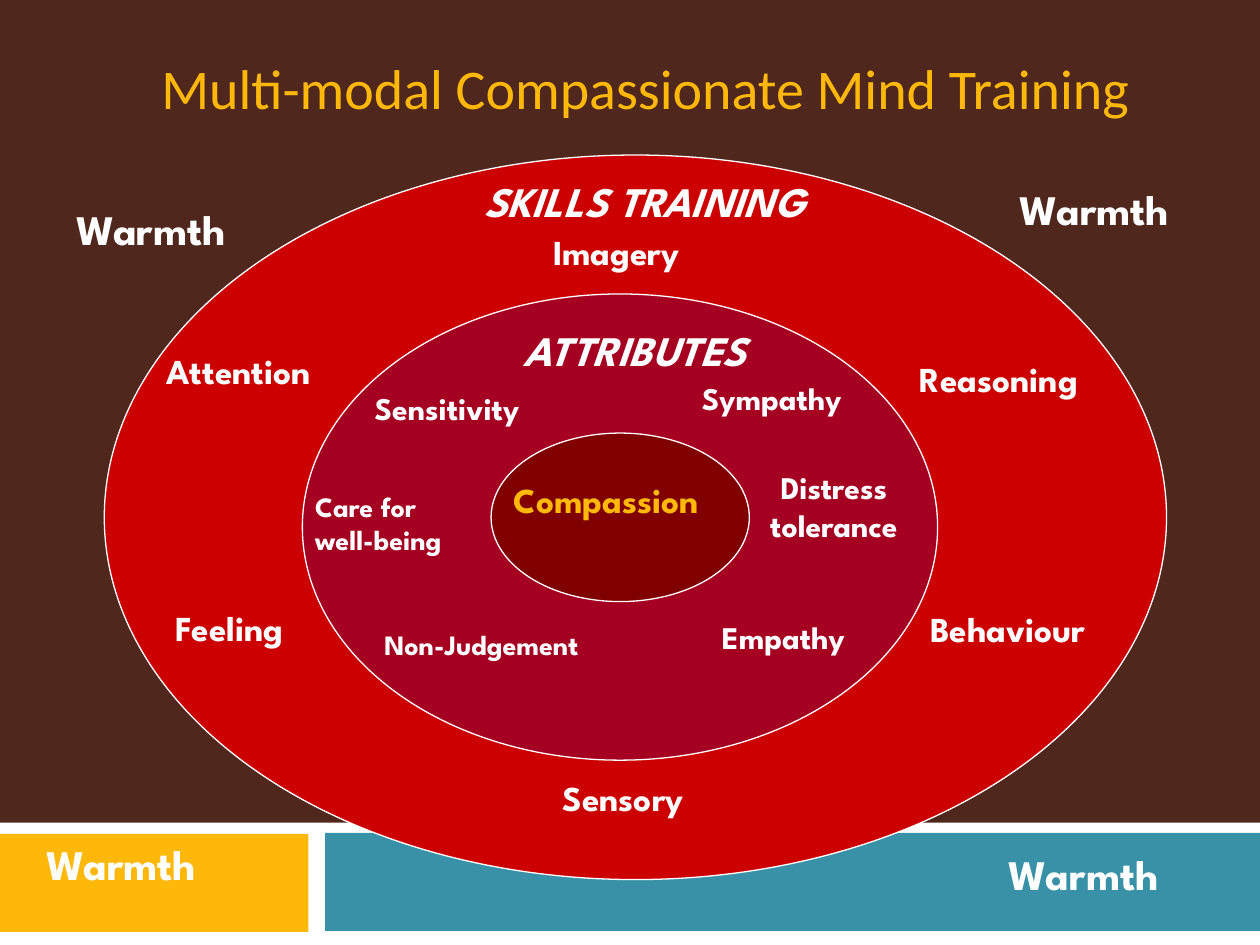
from dataclasses import dataclass

from pptx import Presentation
from pptx.dml.color import RGBColor
from pptx.enum.shapes import MSO_SHAPE
from pptx.enum.text import MSO_ANCHOR, MSO_AUTO_SIZE, PP_ALIGN
from pptx.shapes.autoshape import Shape
from pptx.slide import Slide
from pptx.util import Pt


@dataclass(frozen=True)
class Theme:
    back: str = "4F271C"
    white: str = "FFFFFF"
    gold: str = "FEB80A"
    teal: str = "3891A7"
    red: str = "CC0000"
    wine: str = "A50021"
    maroon: str = "800000"
    font: str = "League Spartan"
    title_font: str = "Calibri"
    title: int = 32
    head: int = 24
    skill: int = 20
    trait: int = 18
    small: int = 16
    edge: float = 0.75


THEME = Theme()


@dataclass(frozen=True)
class Box:
    left: float
    top: float
    width: float
    height: float

    def points(self) -> tuple:
        return Pt(self.left), Pt(self.top), Pt(self.width), Pt(self.height)


@dataclass(frozen=True)
class Label:
    text: str
    box: Box
    size: int
    color: str = THEME.white
    font: str = THEME.font
    bold: bool = True
    slant: bool = False
    align: PP_ALIGN = PP_ALIGN.LEFT
    anchor: MSO_ANCHOR = MSO_ANCHOR.TOP
    fit: MSO_AUTO_SIZE = MSO_AUTO_SIZE.SHAPE_TO_FIT_TEXT
    leading: float = 1.0


@dataclass(frozen=True)
class Patch:
    box: Box
    fill: str


def set_all(target: object, values: dict) -> None:
    for name, value in values.items():
        setattr(target, name, value)


def draw_patch(slide: Slide, kind: MSO_SHAPE, patch: Patch) -> Shape:
    shape = slide.shapes.add_shape(kind, *patch.box.points())
    shape.shadow.inherit = False
    shape.fill.solid()
    shape.fill.fore_color.rgb = RGBColor.from_string(patch.fill)
    shape.line.fill.background()
    return shape


def draw_ring(slide: Slide, ring: Patch) -> None:
    line = draw_patch(slide, MSO_SHAPE.OVAL, ring).line
    line.color.rgb = RGBColor.from_string(THEME.white)
    line.width = Pt(THEME.edge)


def draw_label(slide: Slide, label: Label) -> None:
    frame = slide.shapes.add_textbox(*label.box.points()).text_frame
    set_all(frame, {"word_wrap": True, "auto_size": label.fit,
                    "vertical_anchor": label.anchor})
    para = frame.paragraphs[0]
    set_all(para, {"alignment": label.align, "line_spacing": label.leading})
    run = para.add_run()
    run.text = label.text
    set_all(run.font, {"name": label.font, "size": Pt(label.size),
                       "bold": label.bold, "italic": label.slant})
    run.font.color.rgb = RGBColor.from_string(label.color)


def skill(text: str, left: float, top: float, width: float) -> Label:
    return Label(text, Box(left, top, width, 31), THEME.skill)


def trait(text: str, box: Box, size: int = THEME.trait,
          align: PP_ALIGN = PP_ALIGN.LEFT) -> Label:
    return Label(text, box, size, align=align)


def head(text: str, left: float, top: float, width: float,
         slant: bool = False, align: PP_ALIGN = PP_ALIGN.LEFT) -> Label:
    return Label(text, Box(left, top, width, 33), THEME.head,
                 slant=slant, align=align, leading=0.9)


# Footer bands
BANDS = [
    Patch(Box(0, 470, 720, 70), THEME.white),
    Patch(Box(-0.7, 476.6, 177, 56), THEME.gold),
    Patch(Box(185.8, 476, 534.2, 56), THEME.teal),
]

# Rings, from the outside in, each with its labels
RINGS = [
    (Patch(Box(59.6, 88.6, 607, 414), THEME.red), [
        skill("Imagery", 309, 128, 130),
        skill("Attention", 88, 196, 142),
        skill("Reasoning", 518.5, 201, 130),
        skill("Feeling", 93.5, 343, 113),
        skill("Behaviour", 524.5, 343.5, 130),
        skill("Sensory", 314.5, 440, 108),
    ]),
    (Patch(Box(172.8, 168, 363, 266.4), THEME.wine), [
        trait("Care for well-being", Box(173, 276, 102, 46), THEME.small),
        trait("Sensitivity", Box(207, 219, 108, 29)),
        trait("Sympathy", Box(394, 213, 119, 29)),
        trait("Distress tolerance", Box(422.5, 264, 108, 50),
              align=PP_ALIGN.CENTER),
        trait("Empathy", Box(405.5, 349.5, 102, 29)),
        trait("Non-Judgement", Box(212.5, 355, 153, 27), THEME.small),
    ]),
    (Patch(Box(280.6, 247.5, 147.6, 96.3), THEME.maroon), [
        Label("Compassion", Box(286.5, 270, 147.6, 32), THEME.skill,
              THEME.gold),
    ]),
]

TITLE = Label("Multi-modal Compassionate Mind Training",
              Box(48, 20, 642, 52.6), THEME.title, THEME.gold,
              THEME.title_font, bold=False, align=PP_ALIGN.CENTER,
              anchor=MSO_ANCHOR.BOTTOM, fit=MSO_AUTO_SIZE.NONE)

# Ring headings, then the warmth around them
HEADS = [
    head("ATTRIBUTES", 281, 185, 164, True, PP_ALIGN.CENTER),
    head("SKILLS TRAINING", 269.5, 100, 215, True),
] + [head("Warmth", *place) for place in (
    (36.5, 116, 119), (19.5, 479, 114), (575.5, 104.5, 113),
    (569.5, 484.5, 150))]


def main() -> None:
    deck = Presentation()
    set_all(deck, {"slide_width": Pt(720), "slide_height": Pt(540)})
    slide = deck.slides.add_slide(deck.slide_layouts[6])
    slide.background.fill.solid()
    slide.background.fill.fore_color.rgb = RGBColor.from_string(THEME.back)

    for band in BANDS:
        draw_patch(slide, MSO_SHAPE.RECTANGLE, band)
    draw_label(slide, TITLE)
    for ring, labels in RINGS:
        draw_ring(slide, ring)
        for label in labels:
            draw_label(slide, label)
    for label in HEADS:
        draw_label(slide, label)

    deck.save("out.pptx")


if __name__ == "__main__":
    main()
